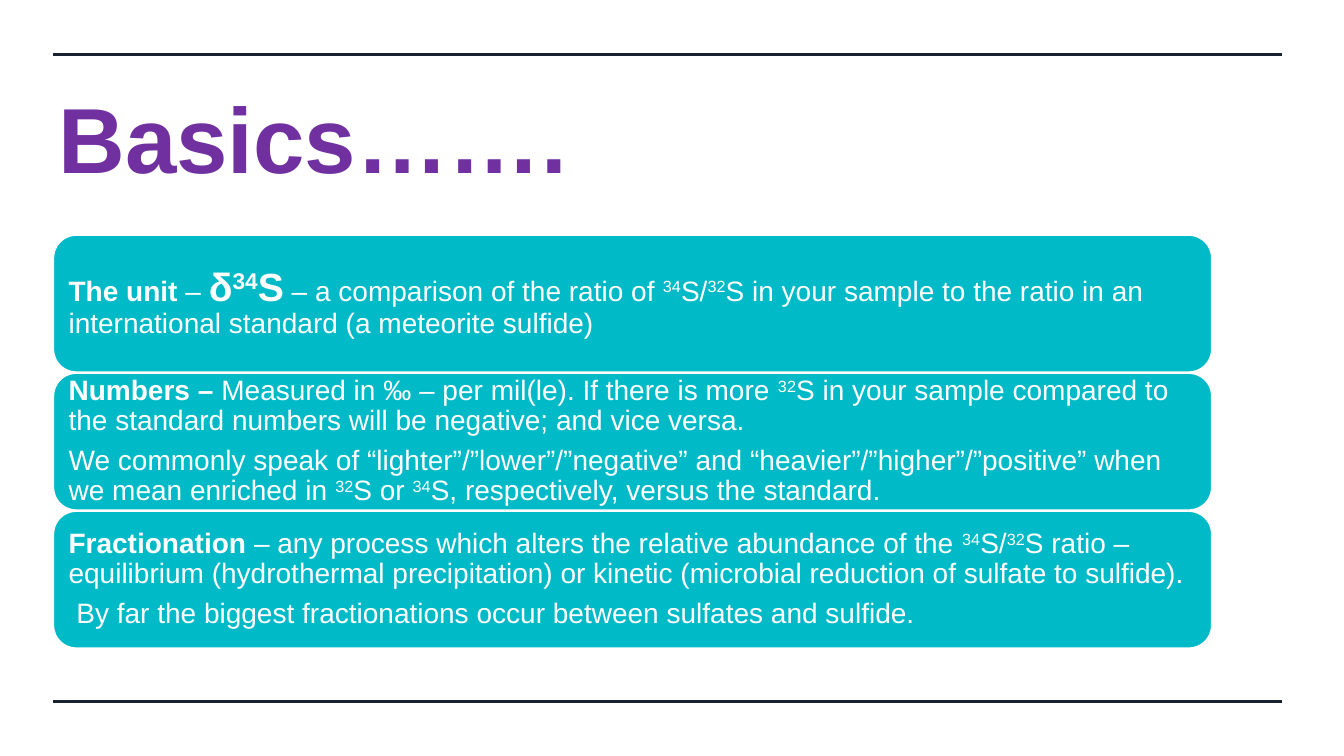
from pptx import Presentation
from pptx.dml.color import RGBColor
from pptx.enum.shapes import MSO_CONNECTOR, MSO_SHAPE
from pptx.enum.text import MSO_ANCHOR, PP_ALIGN
from pptx.oxml.ns import qn
from pptx.util import Pt
from lxml.etree import SubElement

NAVY = RGBColor(0x18, 0x22, 0x30)
PURPLE = RGBColor(0x70, 0x30, 0xA0)
TEAL = RGBColor(0x00, 0xBA, 0xC8)
WHITE = RGBColor(0xFF, 0xFF, 0xFF)

LEFT = 38.2


def write(para, text, size=20, bold=False, color=WHITE):
    """Add text to a paragraph; parts between ^ marks are superscript."""
    for i, part in enumerate(text.split("^")):
        if not part:
            continue
        run = para.add_run()
        run.text = part
        run.font.name = "Arial"
        run.font.size = Pt(size)
        run.font.bold = bold
        run.font.color.rgb = color
        if i % 2:
            run._r.get_or_add_rPr().set("baseline", "30000")


deck = Presentation()
deck.slide_width, deck.slide_height = Pt(960), Pt(540)
slide = deck.slides.add_slide(deck.slide_layouts[6])

# Rules at top and bottom
for y in (38.9, 501.1):
    rule = slide.shapes.add_connector(
        MSO_CONNECTOR.STRAIGHT, Pt(LEFT), Pt(y), Pt(915.8), Pt(y))
    rule.line.color.rgb = NAVY
    rule.line.width = Pt(2.25)
    SubElement(rule._element.spPr, qn("a:effectLst"))

# Title
title = slide.shapes.add_textbox(Pt(LEFT), Pt(58), Pt(837.4), Pt(76))
frame = title.text_frame
frame.word_wrap = True
frame.margin_left = Pt(3.6)
frame.margin_top = frame.margin_bottom = 0
write(frame.paragraphs[0], "Basics…….", size=66, bold=True, color=PURPLE)

# Cards: each is a list of paragraphs, each paragraph a list of (text, format)
BOLD = {"bold": True}
cards = [
    [[("The unit ", BOLD), ("– ", {}),
      ("δ^34^S", {"size": 28, "bold": True}),
      (" – a comparison of the ratio of ^34^S/^32^S in your sample to the "
       "ratio in an international standard (a meteorite sulfide)", {})]],
    [[("Numbers – ", BOLD),
      ("Measured in ‰ – per mil(le). If there is more ^32^S in your sample "
       "compared to the standard numbers will be negative; and vice versa.", {})],
     [("We commonly speak of “lighter”/”lower”/”negative” and "
       "“heavier”/”higher”/”positive” when we mean enriched in ^32^S or "
       "^34^S, respectively, versus the standard.", {})]],
    [[("Fractionation", BOLD),
      (" – any process which alters the relative abundance of the "
       "^34^S/^32^S ratio – equilibrium (hydrothermal precipitation) or "
       "kinetic (microbial reduction of sulfate to sulfide).", {})],
     [(" By far the biggest fractionations occur between sulfates and "
       "sulfide.", {})]],
]
for row, card in enumerate(cards):
    box = slide.shapes.add_shape(
        MSO_SHAPE.ROUNDED_RECTANGLE,
        Pt(LEFT), Pt(168 + 98.6 * row), Pt(827.3), Pt(97.7))
    box.shadow.inherit = False
    box.fill.solid()
    box.fill.fore_color.rgb = TEAL
    box.line.color.rgb = WHITE
    box.line.width = Pt(1)
    frame = box.text_frame
    frame.word_wrap = True
    frame.vertical_anchor = MSO_ANCHOR.MIDDLE
    frame.margin_left = frame.margin_right = Pt(6)
    frame.margin_top = frame.margin_bottom = Pt(6)
    for i, parts in enumerate(card):
        para = frame.add_paragraph() if i else frame.paragraphs[0]
        para.alignment = PP_ALIGN.LEFT
        para.line_spacing = 0.9
        para.space_after = Pt(7)
        for text, style in parts:
            write(para, text, **style)

deck.save("out.pptx")
